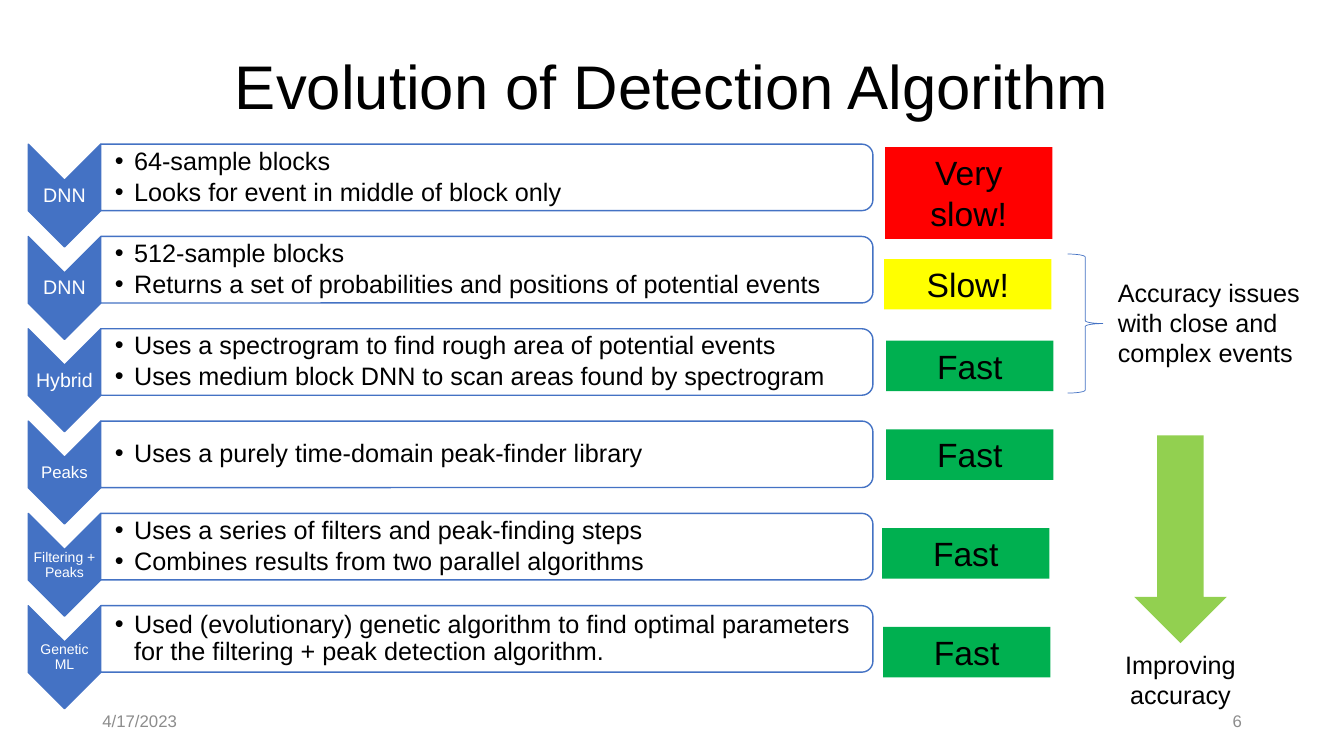
from lxml import etree
from pptx import Presentation
from pptx import util as u
from pptx.dml.color import RGBColor
from pptx.enum import shapes, text
from pptx.oxml.ns import qn

COLORS = {
    "black": "000000", "white": "FFFFFF", "gray": "8C8C8C", "blue": "4472C4",
    "red": "FF0000", "yellow": "FFFF00", "green": "00B050", "lime": "92D050",
}
FONT = "Arial"
WIDTH, HEIGHT = u.Inches(13.33), u.Inches(7.5)
COLUMN, ROW = WIDTH / 100, HEIGHT / 100
FIRST_ROW, ROW_STEP = 19.07, 12.21
CENTER, RIGHT = text.PP_ALIGN.CENTER, text.PP_ALIGN.RIGHT
MIDDLE, TOP = text.MSO_ANCHOR.MIDDLE, text.MSO_ANCHOR.TOP

STAGES = [
    ("DNN", 14, ["64-sample blocks", "Looks for event in middle of block only"]),
    ("DNN", 14, ["512-sample blocks",
                 "Returns a set of probabilities and positions of potential events"]),
    ("Hybrid", 14, ["Uses a spectrogram to find rough area of potential events",
                    "Uses medium block DNN to scan areas found by spectrogram"]),
    ("Peaks", 12, ["Uses a purely time-domain peak-finder library"]),
    ("Filtering + Peaks", 10, ["Uses a series of filters and peak-finding steps",
                               "Combines results from two parallel algorithms"]),
    ("Genetic ML", 10, ["Used (evolutionary) genetic algorithm to find optimal parameters "
                        "for the filtering + peak detection algorithm."]),
]
SPEEDS = [
    ("Very slow!", "red", 65.85, 19.47, 12.13),
    ("Slow!", "yellow", 65.78, 34.27, 6.67),
    ("Fast", "green", 65.93, 45.07, 6.67),
    ("Fast", "green", 65.93, 56.8, 6.67),
    ("Fast", "green", 65.63, 69.87, 6.67),
    ("Fast", "green", 65.7, 82.93, 6.67),
]


def rgb(name):
    return RGBColor.from_string(COLORS[name])


def place(left, top, width, height):
    return (round(left * COLUMN), round(top * ROW),
            round(width * COLUMN), round(height * ROW))


def add_bullet(paragraph):
    properties = paragraph._p.get_or_add_pPr()
    properties.set("marL", str(u.Inches(0.19)))
    properties.set("indent", str(-u.Inches(0.19)))
    etree.SubElement(properties, qn("a:buFont")).set("typeface", FONT)
    etree.SubElement(properties, qn("a:buChar")).set("char", "•")


def write(shape, lines, size=18, color="black", align=None, anchor=TOP,
          spacing=None, after=0, bullets=False, margins=None):
    frame = shape.text_frame
    frame.word_wrap = True
    frame.vertical_anchor = anchor
    if margins:
        (frame.margin_left, frame.margin_top,
         frame.margin_right, frame.margin_bottom) = map(u.Inches, margins)
    for index, line in enumerate(lines):
        paragraph = frame.add_paragraph() if index else frame.paragraphs[0]
        if bullets:
            add_bullet(paragraph)
        paragraph.alignment = align or text.PP_ALIGN.LEFT
        paragraph.line_spacing = spacing
        paragraph.space_after = u.Pt(after)
        run = paragraph.add_run()
        run.text = line
        run.font.size = u.Pt(size)
        run.font.name = FONT
        run.font.color.rgb = rgb(color)


def add_text(slide, box, lines, **format):
    write(slide.shapes.add_textbox(*place(*box)), lines, **format)


def add_block(slide, kind, box, fill=None, line=None, line_width=1, turned=False):
    left, top, width, height = place(*box)
    if turned:
        left, top = left + (width - height) // 2, top + (height - width) // 2
        width, height = height, width
    shape = slide.shapes.add_shape(kind, left, top, width, height)
    shape.rotation = 90 if turned else 0
    shape.shadow.inherit = False
    if fill:
        shape.fill.solid()
        shape.fill.fore_color.rgb = rgb(fill)
    else:
        shape.fill.background()
    if line:
        shape.line.color.rgb = rgb(line)
        shape.line.width = u.Pt(line_width)
    else:
        shape.line.fill.background()
    return shape


def add_stage(slide, index, label, label_size, details):
    top = FIRST_ROW + index * ROW_STEP
    kinds = shapes.MSO_SHAPE
    add_block(slide, kinds.CHEVRON, (2.1, top, 5.4, 13.6),
              fill="blue", line="blue", turned=True)
    add_text(slide, (2.1, top + 4.8, 5.4, 4.13), [label], size=label_size,
             color="white", align=CENTER, anchor=MIDDLE, spacing=0.9,
             after=label_size * 0.35, margins=(0.01, 0.01, 0.01, 0.01))
    add_block(slide, kinds.ROUND_2_SAME_RECTANGLE, (7.5, top, 57.45, 8.8),
              fill="white", line="blue", turned=True)
    add_text(slide, (7.5, top + 0.4, 57.23, 8), details, anchor=MIDDLE, spacing=0.9,
             after=2.7, bullets=True, margins=(0.14, 0.01, 0.01, 0.01))


def add_speed(slide, label, color, left, top, height):
    shape = add_block(slide, shapes.MSO_SHAPE.RECTANGLE,
                      (left, top, 12.45, height), fill=color)
    write(shape, [label], size=24, align=CENTER)


def main():
    presentation = Presentation()
    presentation.slide_width, presentation.slide_height = WIDTH, HEIGHT
    slide = presentation.slides.add_slide(presentation.slide_layouts[6])

    add_text(slide, (6.88, 2.13, 86.25, 19.33), ["Evolution of Detection Algorithm"],
             size=44, align=CENTER, anchor=MIDDLE, spacing=0.9)
    for index, stage in enumerate(STAGES):
        add_stage(slide, index, *stage)
    for speed in SPEEDS:
        add_speed(slide, *speed)

    add_block(slide, shapes.MSO_SHAPE.RIGHT_BRACE, (79.43, 33.6, 2.63, 18.4),
              line="blue", line_width=0.5)
    add_text(slide, (82.43, 36, 15.45, 13.47),
             ["Accuracy issues with close and complex events"])
    add_block(slide, shapes.MSO_SHAPE.DOWN_ARROW, (84.38, 57.6, 6.9, 27.47), fill="lime")
    add_text(slide, (79.43, 85.2, 16.8, 9.47), ["Improving accuracy"], align=CENTER)

    footer = dict(size=12, color="gray", anchor=MIDDLE)
    add_text(slide, (6.88, 92.67, 22.5, 5.33), ["4/17/2023"], **footer)
    add_text(slide, (70.65, 92.67, 22.5, 5.33), ["6"], align=RIGHT, **footer)
    presentation.save("out.pptx")


if __name__ == "__main__":
    main()
